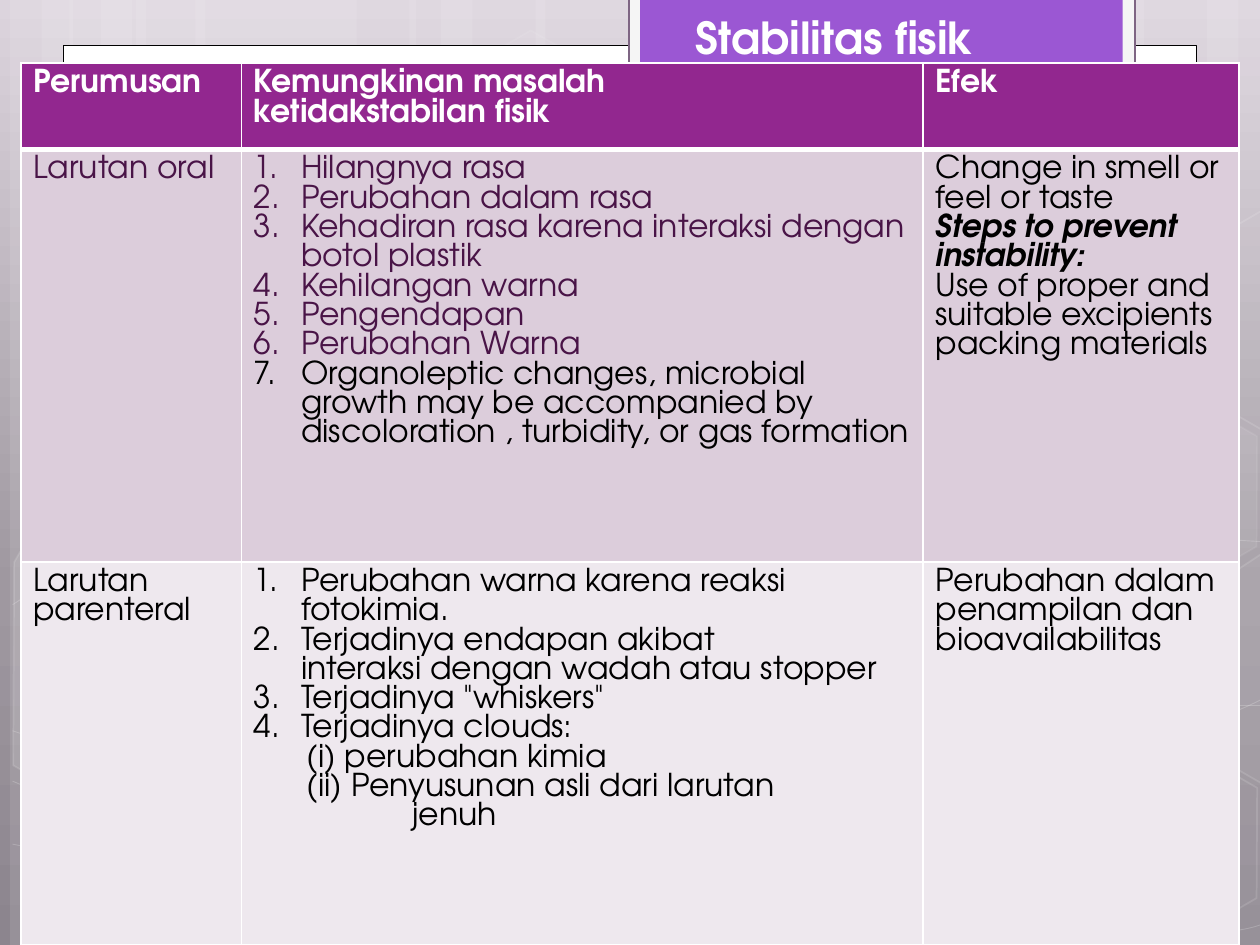
from copy import deepcopy
from dataclasses import dataclass
from math import cos, radians, sin
from typing import NamedTuple

from lxml import etree
from pptx import Presentation
from pptx.dml.color import RGBColor
from pptx.enum.shapes import MSO_SHAPE
from pptx.enum.text import MSO_ANCHOR
from pptx.oxml.ns import qn
from pptx.util import Inches, Pt

RECT, HEX = MSO_SHAPE.RECTANGLE, MSO_SHAPE.HEXAGON
BOTTOM = MSO_ANCHOR.BOTTOM
WIDE, HIGH = Inches(10), Inches(7.5)
UNIT = WIDE // 100
TILT = 30
FONT = "TeX Gyre Adventor"
WHITE, BLACK, PLUM = "FFFFFF", "000000", "491447"
HEAD, DARK, PALE = "92278F", "DCCDDB", "EEE8EE"


class Box(NamedTuple):
    col: float
    row: float
    cols: float
    rows: float


class Look(NamedTuple):
    fill: str | None = None
    clear: int = 100
    line: str | None = None
    width: float = 1
    faint: int = 100


@dataclass
class Para:
    text: str
    color: str = BLACK
    bold: bool = False
    slant: bool = False
    mark: bool = False
    left: float = 0
    hang: float = 0


@dataclass
class Cell:
    paras: list[Para]
    fill: str


def tone(code: str) -> RGBColor:
    return RGBColor.from_string(code)


def size(count: float) -> int:
    return round(count * UNIT)


def fade(shape, route: str, share: int) -> None:
    if share < 100:
        for node in shape._element.spPr.xpath(route + "/a:srgbClr"):
            etree.SubElement(node, qn("a:alpha"), val=str(share * 1000))


def paint(shape, look: Look) -> None:
    shape.shadow.inherit = False
    for fill, code in ((shape.fill, look.fill), (shape.line.fill, look.line)):
        if code:
            fill.solid()
            fill.fore_color.rgb = tone(code)
        else:
            fill.background()
    if look.line:
        shape.line.width = Pt(look.width)
    fade(shape, "a:solidFill", look.clear)
    fade(shape, "a:ln/a:solidFill", look.faint)


def block(shapes, kind, box: Box, look: Look):
    shape = shapes.add_shape(kind, *map(size, box))
    paint(shape, look)
    return shape


def trace(shapes, points: list, look: Look, close: bool):
    pen = shapes.build_freeform(*points[0], scale=UNIT)
    pen.add_line_segments(points[1:], close=close)
    shape = pen.convert_to_shape()
    paint(shape, look)
    return shape


def bend(shape) -> None:
    lines = shape._element.xpath(".//a:lnTo")
    for i in range(0, len(lines), 3):
        arc = etree.Element(qn("a:cubicBezTo"))
        lines[i].addprevious(arc)
        for line in lines[i:i + 3]:
            arc.append(line[0])
            line.getparent().remove(line)


def spin(points: list, mid: tuple, angle: float) -> list:
    c, s = cos(radians(angle)), sin(radians(angle))
    return [(mid[0] + (x - mid[0]) * c - (y - mid[1]) * s,
             mid[1] + (x - mid[0]) * s + (y - mid[1]) * c) for x, y in points]


def write(frame, paras: list[Para], points: float, pitch: float | None = None) -> None:
    for i, para in enumerate(paras):
        line = frame.paragraphs[0] if i == 0 else frame.add_paragraph()
        line.text = para.text
        if pitch:
            line.line_spacing = Pt(pitch)
        style = {"name": FONT, "size": Pt(points), "bold": para.bold, "italic": para.slant}
        for run in line.runs:
            for key, value in style.items():
                setattr(run.font, key, value)
            run.font.color.rgb = tone(para.color)
        if para.left:
            props = line._p.get_or_add_pPr()
            props.set("marL", str(size(para.left)))
            props.set("indent", str(-size(para.hang)))
            if para.mark:
                etree.SubElement(props, qn("a:buFont"), typeface="+mj-lt")
                etree.SubElement(props, qn("a:buAutoNum"), type="arabicPeriod")


def edge(cell, side: str, width: float) -> None:
    line = etree.SubElement(cell._tc.get_or_add_tcPr(), qn("a:ln" + side), w=str(Pt(width)))
    etree.SubElement(etree.SubElement(line, qn("a:solidFill")), qn("a:srgbClr"), val=WHITE)


def grid(shapes, box: Box, cols: list, rows: list, cells: list[list[Cell]]) -> None:
    table = shapes.add_table(len(rows), len(cols), *map(size, box)).table
    table.horz_banding = False
    for col, count in zip(table.columns, cols):
        col.width = size(count)
    for row, count in zip(table.rows, rows):
        row.height = size(count)
    for r, line in enumerate(cells):
        for c, item in enumerate(line):
            cell = table.cell(r, c)
            for side in "LRTB":
                thick = (r, side) in ((0, "B"), (1, "T"))
                edge(cell, side, 3 if thick else 1)
            cell.fill.solid()
            cell.fill.fore_color.rgb = tone(item.fill)
            write(cell.text_frame, item.paras, 18, 16.75)


def plain(*texts: str, **style) -> list[Para]:
    return [Para(text, **style) for text in texts]


def steps(*texts: str, color: str = BLACK) -> list[Para]:
    return plain(*texts, color=color, mark=True, left=3.75, hang=3.75)


def shade(slide) -> None:
    fill = slide.background.fill
    fill.gradient()
    fill.gradient_angle = 270
    stops = slide.element.xpath(".//a:gsLst")[0]
    stops.append(deepcopy(stops[0]))
    for stop, (place, code) in zip(fill.gradient_stops, ((0, "DCD4DD"), (0.62, "9F98A0"), (1, "8C858E"))):
        stop.position = place
        stop.color.rgb = tone(code)


TRIO = [(10.8, 17.5), (0.8, 5), (3.3, 8.3)]
STRIPS = TRIO + [(col + 4.7, cols) for col, cols in TRIO] + [
    (73.3, 17.5), (95.8, 5), (90, 8.3), (42.5, 30.8), (32.5, 5), (35, 8.3)]
WAVES = [
    [(0.7, 67.3), (6.1, 67.6), (11.5, 67.9), (19, 67.8), (26.5, 67.7), (35.8, 67.5), (45.8, 66.5),
     (55.8, 65.5), (70, 63.6), (79.2, 61.7), (88.3, 59.8), (97.7, 56.8), (100.7, 55.1)],
    [(0.7, 47.7), (3.6, 46.1), (6.5, 44.6), (12.1, 43.1), (17.8, 41.6), (25.9, 39.4), (34.7, 38.7),
     (43.6, 38), (54.4, 37.9), (65.4, 38.7), (76.4, 39.5), (94.7, 42.6), (100.7, 43.4)],
    [(0.6, 61.7), (12.7, 67.2), (24.7, 72.7), (33.4, 74.9)],
    [(0.7, 57.8), (3.8, 58.9), (7, 60), (12.8, 61.6), (18.6, 63.1), (27.3, 65.6), (35.7, 67.3),
     (44, 69), (54.5, 70.8), (62.8, 71.8), (71.1, 72.9), (80, 73.3), (85.3, 73.6),
     (90.5, 74), (91.9, 73.8), (94.5, 73.8), (97.1, 73.7), (98.9, 73.5), (100.7, 73.4)],
    [(24.2, 74.9), (26, 72.9), (27.8, 70.9), (30.2, 69.1), (32.6, 67.3), (36, 65.3), (38.8, 63.9),
     (41.6, 62.5), (43.3, 61.9), (47, 60.9), (50.6, 59.9), (57.3, 58.5), (60.8, 57.8),
     (64.4, 57.1), (64.9, 57.1), (68, 56.9), (71.1, 56.6), (76, 56.3), (79.4, 56.2),
     (82.9, 56.1), (88.6, 56.2), (88.6, 56.2), (90.8, 56.2), (93.1, 56.2), (95.3, 56.2),
     (97.1, 56.3), (98.8, 56.4), (99.7, 56.5), (100.6, 56.6), (100.3, 56.5), (100.6, 56.6)],
]
COMBS = [(33.4, 3.6, 4, 8), (83.4, 59.3, None, 12), (83.4, 31.4, 7, 8)]
LEFT = [(0.8, 44.5), (1.9, 43.8), (9.6, 48.2), (9.5, 57), (2, 61.4), (0.8, 60.7)]
RIGHT = [(92.6, 48.5), (100.1, 44.1), (100.9, 44.6), (100.9, 61.3), (100.2, 61.7), (92.6, 57.3)]
SHARDS = [(LEFT, (3.6, 53.5), 10), (RIGHT, (98.5, 52), 4),
          ([(x, y - 27.8) for x, y in RIGHT], (98.5, 24.2), None)]
CARDS = [
    (Box(5, 3.6, 90, 67.6), Look(WHITE, line=BLACK, width=0.5)),
    (Box(49.9, -0.2, 40.2, 7.6), Look("F5F5F5", line="7E6583", width=1.25)),
    (Box(50.8, -0.2, 38.3, 6.8), Look("9B57D3")),
]
BOLD = {"color": WHITE, "bold": True}
CELLS = [
    [Cell(plain("Perumusan", **BOLD), HEAD),
     Cell(plain("Kemungkinan masalah", "ketidakstabilan fisik", **BOLD), HEAD),
     Cell(plain("Efek", **BOLD), HEAD)],
    [Cell(plain("Larutan oral", color=PLUM), DARK),
     Cell(steps("Hilangnya rasa", "Perubahan dalam rasa",
                "Kehadiran rasa karena interaksi dengan botol plastik",
                "Kehilangan warna", "Pengendapan", "Perubahan Warna", color=PLUM)
          + steps("Organoleptic changes, microbial growth may be accompanied by "
                  "discoloration , turbidity, or gas formation"), DARK),
     Cell(plain("Change in smell or feel or taste")
          + plain("Steps to prevent instability:", bold=True, slant=True)
          + plain("Use of proper and suitable excipients packing materials"), DARK)],
    [Cell(plain("Larutan parenteral"), PALE),
     Cell(steps("Perubahan warna karena reaksi\vfotokimia.",
                "Terjadinya endapan akibat\vinteraksi dengan wadah atau stopper",
                'Terjadinya "whiskers"', "Terjadinya clouds:")
          + plain("(i) perubahan kimia", "(ii) Penyusunan asli dari larutan\vjenuh",
                  left=12.6, hang=8.4), PALE),
     Cell(plain("Perubahan dalam", "penampilan dan", "bioavailabilitas"), PALE)],
]


def main() -> None:
    deck = Presentation()
    deck.slide_width, deck.slide_height = WIDE, HIGH
    slide = deck.slides.add_slide(deck.slide_layouts[6])
    shapes = slide.shapes
    shade(slide)
    for col, cols in STRIPS:
        block(shapes, RECT, Box(col, 0, cols, 75), Look(WHITE, 10))
    for knots in WAVES:
        bend(trace(shapes, knots, Look(line=WHITE, width=0.5, faint=20), False))
    for col, row, clear, faint in COMBS:
        look = Look(WHITE if clear else None, clear or 100, WHITE, 1, faint)
        comb = block(shapes, HEX, Box(col, row, 17.5, 15.2), look)
        comb.adjustments[0] = 0.285
        comb.adjustments[1] = 1.155
        comb.rotation = TILT
    for points, mid, clear in SHARDS:
        look = Look(WHITE if clear else None, clear or 100, WHITE, 1, 12)
        trace(shapes, spin(points, mid, -TILT), look, True).rotation = TILT
    for box, look in CARDS:
        block(shapes, RECT, box, look)
    frame = shapes.add_textbox(*map(size, Box(54.2, 0, 30.8, 5.5))).text_frame
    for key, value in {"word_wrap": True, "vertical_anchor": BOTTOM}.items():
        setattr(frame, key, value)
    write(frame, plain("Stabilitas fisik", **BOLD), 25.2)
    grid(shapes, Box(1.65, 5, 96.7, 70), [17.5, 54.1, 25.1], [6.85, 32.75, 30.4], CELLS)
    deck.save("out.pptx")


if __name__ == "__main__":
    main()
